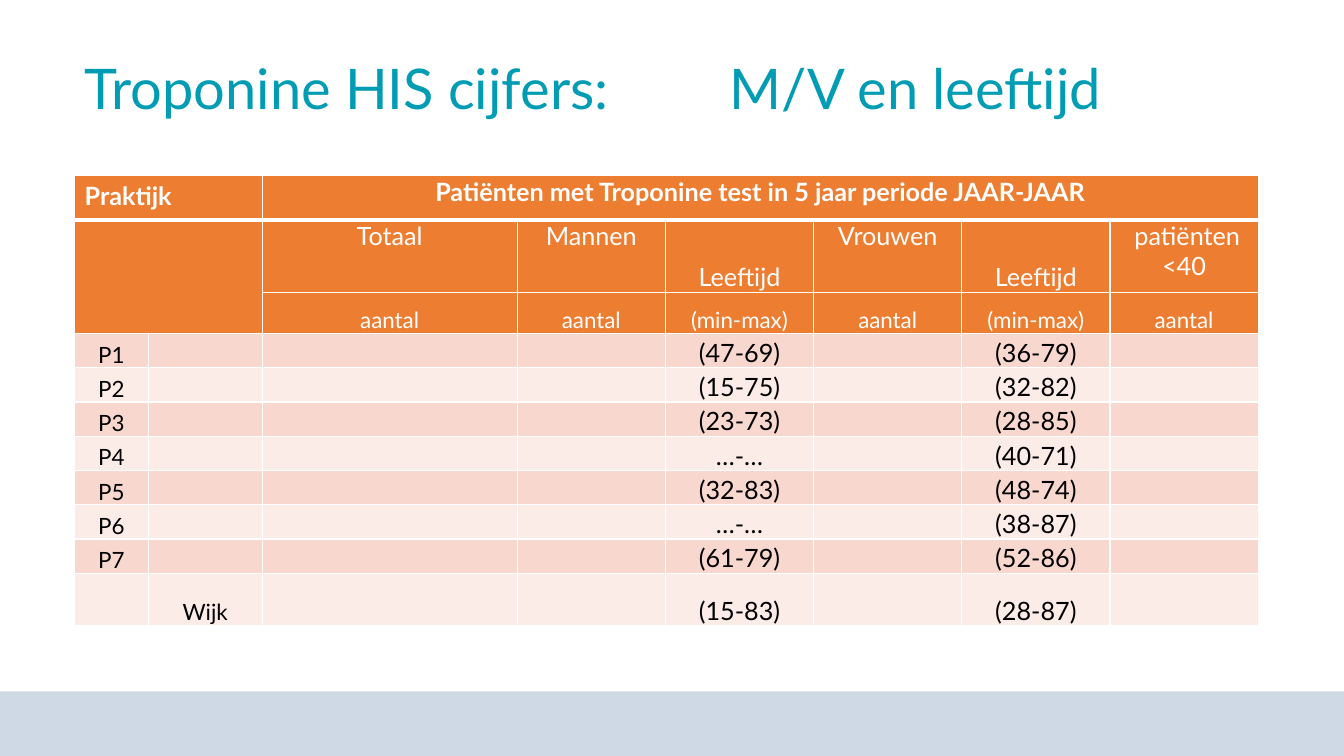
from lxml import etree
from pptx import Presentation
from pptx import util as u
from pptx.dml.color import RGBColor
from pptx.enum import shapes, text
from pptx.oxml.ns import qn

FONT = "Lato"
ORANGE, WHITE, BLACK = "ED7D31", "FFFFFF", "000000"
BANDS = ["F8D7CE", "FCECE8"]
LEFT = 0.74


def style(para, size, color, bold=False):
    """Set the font of a whole paragraph."""
    font = para.font
    font.name, font.size, font.bold = FONT, u.Pt(size), bold
    font.color.rgb = RGBColor.from_string(color)


def add_border(cell, side, points):
    """Draw one white side of a cell; call before the cell is filled."""
    line = etree.SubElement(cell._tc.get_or_add_tcPr(), qn(f"a:ln{side}"), w=str(u.Pt(points)))
    fill = etree.SubElement(line, qn("a:solidFill"))
    etree.SubElement(fill, qn("a:srgbClr"), val=WHITE)


deck = Presentation()
deck.slide_width, deck.slide_height = u.Inches(13.33), u.Inches(7.5)
page = deck.slides.add_slide(deck.slide_layouts[6])

# Footer band
footer_height = u.Inches(0.64)
footer = page.shapes.add_shape(
    shapes.MSO_SHAPE.RECTANGLE, 0, deck.slide_height - footer_height, deck.slide_width, footer_height)
footer.shadow.inherit = False
footer.fill.solid()
footer.fill.fore_color.rgb = RGBColor.from_string("CED9E5")
footer.line.fill.background()

# Table
ranges = [
    ("(47-69)", "(36-79)"), ("(15-75)", "(32-82)"), ("(23-73)", "(28-85)"), ("…-…", "(40-71)"),
    ("(32-83)", "(48-74)"), ("…-…", "(38-87)"), ("(61-79)", "(52-86)"), ("(15-83)", "(28-87)"),
]
rows = [
    ["Praktijk", "", "Patiënten met Troponine test in 5 jaar periode JAAR-JAAR", "", "", "", "", ""],
    ["", "", "Totaal", "Mannen", "Leeftijd", "Vrouwen", "Leeftijd", " patiënten <40"],
    ["", "", "aantal", "aantal", "(min-max)", "aantal", "(min-max)", "aantal"],
]
for number, (men, women) in enumerate(ranges, 1):
    labels = ["", "Wijk"] if number == len(ranges) else [f"P{number}", ""]
    rows.append(labels + ["", "", men, "", women, ""])

widths = [0.73, 1.13, 2.53] + [1.47] * 5
heights = [0.44, 0.72, 0.41] + [0.34] * 7 + [0.52]
table = page.shapes.add_table(
    len(rows), len(widths), u.Inches(LEFT), u.Inches(1.74),
    u.Inches(sum(widths)), u.Inches(sum(heights))).table
for column, width in zip(table.columns, widths):
    column.width = u.Inches(width)
for row, height in zip(table.rows, heights):
    row.height = u.Inches(height)

for r, words in enumerate(rows):
    header = r < 3
    for c, word in enumerate(words):
        cell = table.cell(r, c)
        for side in "LRTB":
            heavy = (r, side) in [(0, "B"), (1, "T")]
            add_border(cell, side, 3 if heavy else 1)
        cell.fill.solid()
        cell.fill.fore_color.rgb = RGBColor.from_string(ORANGE if header else BANDS[(r - 3) % 2])
        cell.text = word
        para = cell.text_frame.paragraphs[0]
        small = r == 2 or (not header and c < 2)
        style(para, 16 if small else 18, WHITE if header else BLACK, r == 0)
        if (r, c) == (0, 0):
            continue
        para.alignment = text.PP_ALIGN.CENTER
        cell.margin_left = cell.margin_right = cell.margin_top = u.Inches(0.01)
        cell.margin_bottom = 0
        if r > 1 or word == "Leeftijd":
            cell.vertical_anchor = text.MSO_ANCHOR.BOTTOM

table.cell(0, 0).merge(table.cell(0, 1))
table.cell(0, 2).merge(table.cell(0, 7))
table.cell(1, 0).merge(table.cell(2, 1))

# Title, its second half set at a tab stop
title = page.shapes.add_textbox(u.Inches(LEFT), u.Inches(0.48), u.Inches(11.92), u.Inches(1.11))
title.text_frame.word_wrap = True
para = title.text_frame.paragraphs[0]
para.text = "Troponine HIS cijfers:\tM/V en leeftijd"
tabs = etree.SubElement(para._p.get_or_add_pPr(), qn("a:tabLst"))
etree.SubElement(tabs, qn("a:tab"), pos=str(u.Inches(6.4)), algn="l")
style(para, 40, "009CB4")

deck.save("out.pptx")
